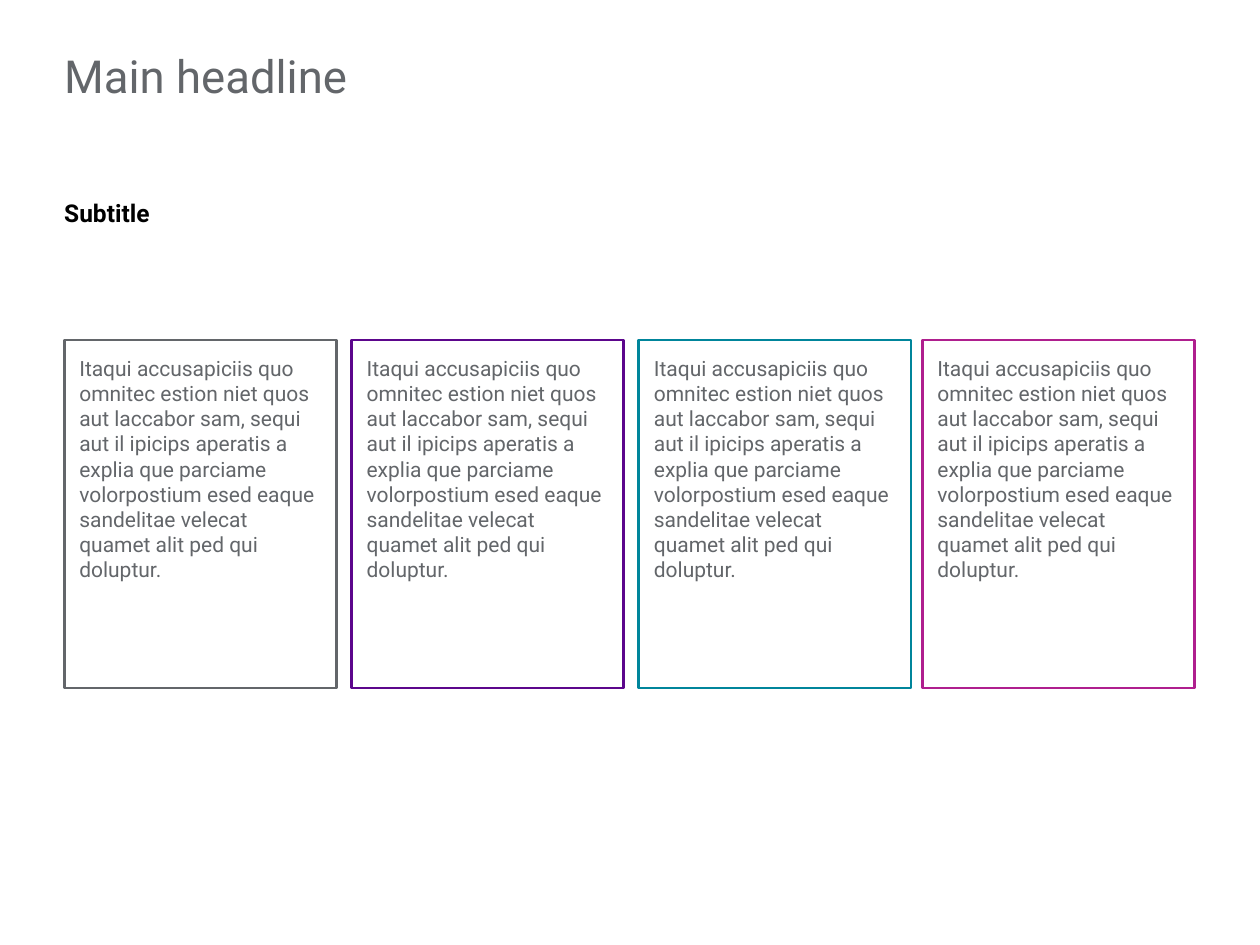
from dataclasses import dataclass

from pptx import Presentation
from pptx.dml.color import RGBColor
from pptx.enum.shapes import MSO_SHAPE as Shape
from pptx.enum.text import MSO_ANCHOR as Anchor, PP_ALIGN as Align
from pptx.shapes.base import BaseShape
from pptx.slide import Slide
from pptx.util import Inches, Pt


@dataclass(frozen=True)
class Theme:
    """Font, colours and type sizes of the slide."""
    font: str = "Roboto"
    grey: str = "63666A"
    black: str = "000000"
    purple: str = "5C068C"
    teal: str = "00859B"
    magenta: str = "AF1F8E"
    title: int = 26
    subtitle: int = 14
    body: int = 12
    border: float = 1.5


@dataclass(frozen=True)
class Card:
    """An outlined text card."""
    left: float
    color: str


THEME = Theme()
MARGIN = 0.51
CARD_TOP, CARD_WIDTH, CARD_HEIGHT, CARD_INSET = 2.7, 2.16, 2.76, 0.12
CARD_TEXT = (
    "Itaqui accusapiciis quo omnitec estion niet quos aut laccabor sam, "
    "sequi aut il ipicips aperatis a explia que parciame volorpostium esed "
    "eaque sandelitae velecat quamet alit ped qui doluptur."
)
CARDS = [
    Card(MARGIN, THEME.grey),
    Card(2.79, THEME.purple),
    Card(5.07, THEME.teal),
    Card(7.32, THEME.magenta),
]


def set_text(sp: BaseShape, text: str, size: int, color: str,
             inset: float = 0, bold: bool = False) -> None:
    """Fill a shape with one top-left aligned paragraph."""
    tf = sp.text_frame
    tf.text = text
    tf.word_wrap = True
    tf.vertical_anchor = Anchor.TOP
    tf.margin_left = tf.margin_right = Inches(inset)
    tf.margin_top = tf.margin_bottom = Inches(inset)
    p = tf.paragraphs[0]
    p.alignment = Align.LEFT
    p.font.name = THEME.font
    p.font.size = Pt(size)
    p.font.bold = bold
    p.font.color.rgb = RGBColor.from_string(color)


def add_title(s: Slide, text: str) -> None:
    """Place and format the title placeholder."""
    sp = s.shapes.title
    sp.left, sp.top = Inches(MARGIN), Inches(0.43)
    sp.width, sp.height = Inches(6.57), Inches(0.79)
    set_text(sp, text, THEME.title, THEME.grey)
    sp.text_frame.paragraphs[0].line_spacing = 0.9


def add_subtitle(s: Slide, text: str) -> None:
    """Add the bold subtitle below the title."""
    sp = s.shapes.add_textbox(Inches(MARGIN), Inches(1.57), Inches(6.57), Inches(0.47))
    set_text(sp, text, THEME.subtitle, THEME.black, bold=True)


def add_card(s: Slide, card: Card) -> None:
    """Draw one card with its coloured border."""
    sp = s.shapes.add_shape(Shape.RECTANGLE, Inches(card.left), Inches(CARD_TOP),
                            Inches(CARD_WIDTH), Inches(CARD_HEIGHT))
    sp.shadow.inherit = False
    sp.fill.background()
    sp.line.color.rgb = RGBColor.from_string(card.color)
    sp.line.width = Pt(THEME.border)
    set_text(sp, CARD_TEXT, THEME.body, THEME.grey, CARD_INSET)


def main() -> None:
    """Build and save the slide."""
    prs = Presentation()
    prs.slide_width, prs.slide_height = Inches(10), Inches(7.5)
    s = prs.slides.add_slide(prs.slide_layouts[5])
    add_title(s, "Main headline")
    add_subtitle(s, "Subtitle")
    for card in CARDS:
        add_card(s, card)
    prs.save("out.pptx")


if __name__ == "__main__":
    main()
